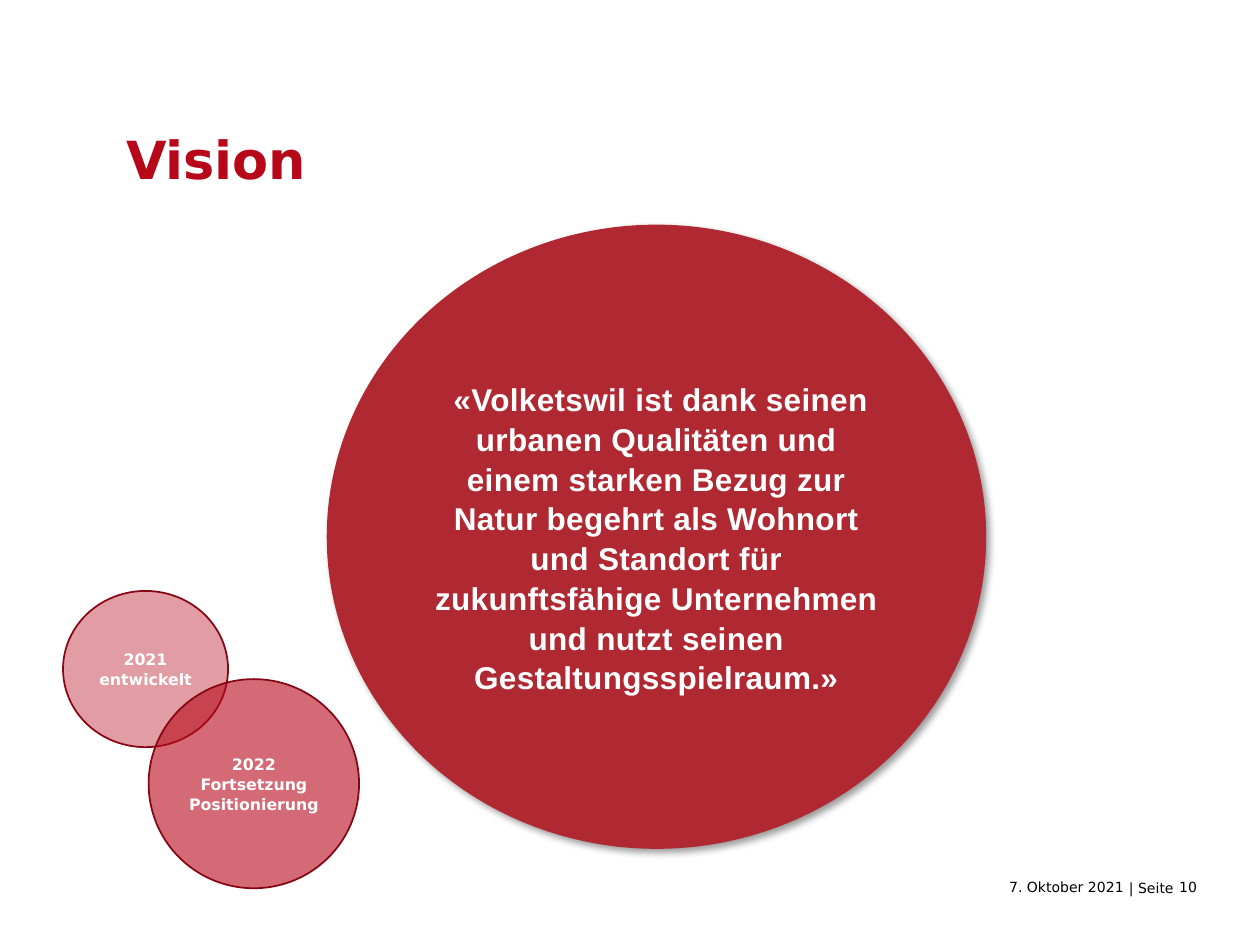
from dataclasses import dataclass

import pptx
import pptx.util
from pptx.dml.color import RGBColor
from pptx.enum.shapes import MSO_SHAPE
from pptx.enum.text import MSO_ANCHOR, PP_ALIGN
from pptx.oxml import parse_xml
from pptx.oxml.ns import nsdecls, qn

EMU_PER_PX = 9144  # 100 px to the inch


@dataclass(frozen=True)
class Theme:
    red: str = "B7081A"
    dark_red: str = "870613"
    vision_red: str = "AF2832"
    white: str = "FFFFFF"
    black: str = "000000"
    heading_font: str = "DejaVu Sans"
    vision_font: str = "Arial"
    title_size: int = 30
    vision_size: int = 18
    step_size: int = 9
    footer_size: int = 8
    heading_spacing: float = 1.1
    circle_spacing: float = 1.05


THEME = Theme()


@dataclass(frozen=True)
class Area:
    left: int
    top: int
    width: int
    height: int


@dataclass(frozen=True)
class Circle:
    area: Area
    lines: tuple[str, ...]
    fill: str = THEME.red
    outline: str = THEME.dark_red
    opacity: int = 100
    font: str = THEME.heading_font
    size: int = THEME.step_size
    margins: tuple[int, int, int, int] = (0, 0, 0, 0)
    tracking: int = 0  # hundredths of a point
    shadow: bool = False


@dataclass(frozen=True)
class FooterItem:
    area: Area
    text: str
    align: PP_ALIGN = PP_ALIGN.RIGHT


CIRCLES = (
    Circle(
        Area(260, 179, 522, 494),
        (
            " «Volketswil ist dank seinen urbanen Qualitäten und einem starken "
            "Bezug zur Natur begehrt als Wohnort und Standort für "
            "zukunftsfähige Unternehmen",
            "und nutzt seinen Gestaltungsspielraum.»",
        ),
        fill=THEME.vision_red,
        outline=THEME.vision_red,
        font=THEME.vision_font,
        size=THEME.vision_size,
        margins=(4, 5, 4, 4),
        tracking=20,
        shadow=True,
    ),
    Circle(Area(50, 469, 131, 124), ("2021", "entwickelt"), opacity=40),
    Circle(Area(118, 539, 167, 166), ("2022", "Fortsetzung Positionierung"), opacity=60),
)

FOOTER = (
    FooterItem(Area(896, 697, 47, 20), "| Seite", PP_ALIGN.LEFT),
    FooterItem(Area(750, 696, 142, 20), "7. Oktober 2021"),
    FooterItem(Area(900, 696, 50, 20), "10"),
)


def px(length: int) -> pptx.util.Emu:
    return pptx.util.Emu(length * EMU_PER_PX)


def bounds(area: Area) -> tuple[pptx.util.Emu, ...]:
    return px(area.left), px(area.top), px(area.width), px(area.height)


def set_frame(frame, margins=(0, 0, 0, 0), anchor=MSO_ANCHOR.TOP) -> None:
    frame.word_wrap = True
    frame.vertical_anchor = anchor
    frame.margin_left, frame.margin_top, frame.margin_right, frame.margin_bottom = map(px, margins)


def style(para, font: str, size: int, color: str, bold: bool, align, spacing: float) -> None:
    para.alignment = align
    para.line_spacing = spacing
    para.font.name = font
    para.font.size = pptx.util.Pt(size)
    para.font.bold = bold
    para.font.color.rgb = RGBColor.from_string(color)


def add_shadow(shape) -> None:
    effects = shape._element.spPr.find(qn("a:effectLst"))
    effects.append(parse_xml(
        f'<a:outerShdw {nsdecls("a")} blurRad="50800" dist="38100" dir="2700000" '
        f'algn="tl" rotWithShape="0"><a:srgbClr val="{THEME.black}">'
        '<a:alpha val="40000"/></a:srgbClr></a:outerShdw>'
    ))


def add_circle(page, circle: Circle) -> None:
    shape = page.shapes.add_shape(MSO_SHAPE.OVAL, *bounds(circle.area))
    shape.shadow.inherit = False
    shape.fill.solid()
    shape.fill.fore_color.rgb = RGBColor.from_string(circle.fill)
    shape.line.color.rgb = RGBColor.from_string(circle.outline)
    shape.line.width = pptx.util.Pt(1)
    if circle.opacity < 100:
        color = shape._element.spPr.find(qn("a:solidFill"))[0]
        color.append(parse_xml(f'<a:alpha {nsdecls("a")} val="{circle.opacity * 1000}"/>'))
    if circle.shadow:
        add_shadow(shape)

    frame = shape.text_frame
    set_frame(frame, circle.margins, MSO_ANCHOR.MIDDLE)
    frame.text = "\n".join(circle.lines)
    for para in frame.paragraphs:
        style(para, circle.font, circle.size, THEME.white, True,
              PP_ALIGN.CENTER, THEME.circle_spacing)
        if circle.tracking:
            for span in para.runs:
                span.font._element.set("spc", str(circle.tracking))


def add_footer_item(page, item: FooterItem) -> None:
    frame = page.shapes.add_textbox(*bounds(item.area)).text_frame
    set_frame(frame)
    frame.text = item.text
    style(frame.paragraphs[0], THEME.heading_font, THEME.footer_size, THEME.black,
          False, item.align, THEME.heading_spacing)


def set_title(page, text: str, area: Area) -> None:
    title = page.shapes.title
    title.left, title.top, title.width, title.height = bounds(area)
    set_frame(title.text_frame)
    title.text_frame.text = text
    style(title.text_frame.paragraphs[0], THEME.heading_font, THEME.title_size,
          THEME.red, True, PP_ALIGN.LEFT, THEME.heading_spacing)


def main() -> None:
    deck = pptx.Presentation()
    deck.slide_width, deck.slide_height = px(1000), px(750)
    page = deck.slides.add_slide(deck.slide_layouts.get_by_name("Title Only"))

    # Title and footer
    set_title(page, "Vision", Area(100, 96, 850, 145))
    for item in FOOTER:
        add_footer_item(page, item)

    # Vision and the steps towards it
    for circle in CIRCLES:
        add_circle(page, circle)

    deck.save("out.pptx")


if __name__ == "__main__":
    main()
